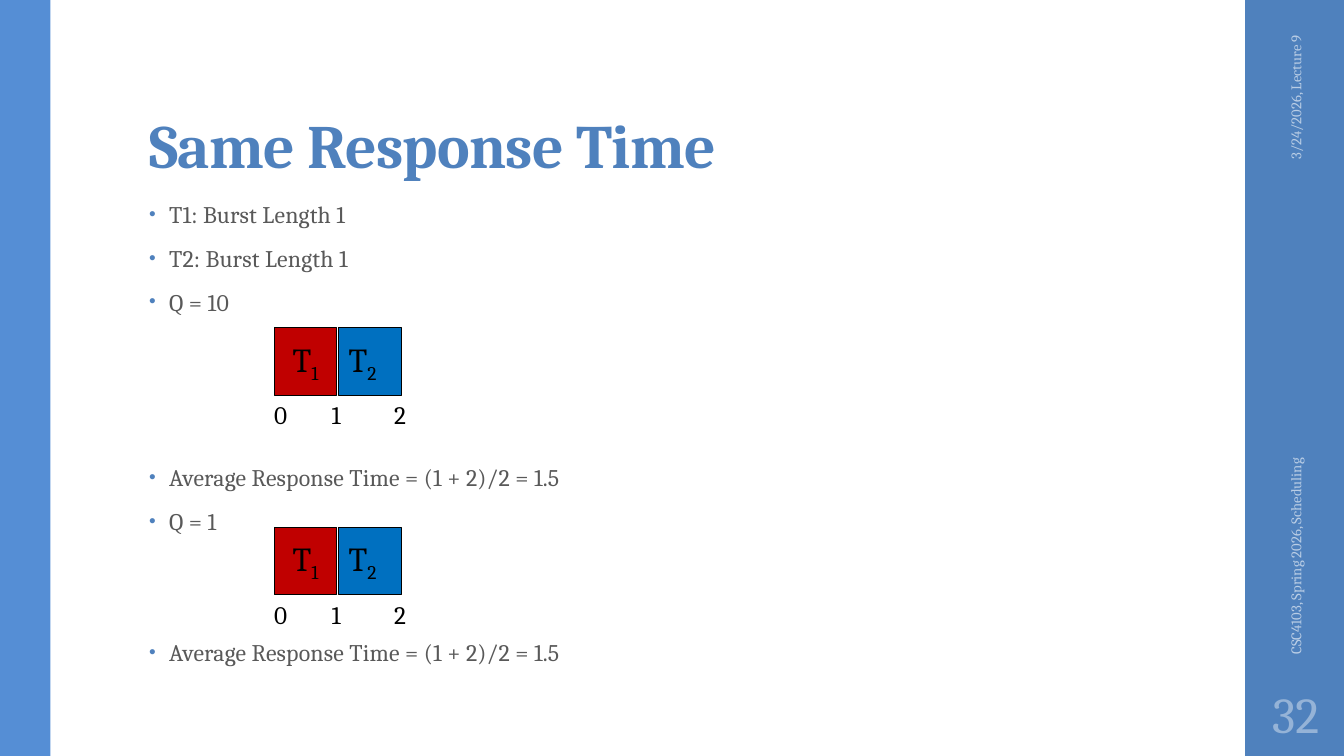
from dataclasses import dataclass

from lxml.etree import SubElement
from pptx import Presentation
from pptx.dml.color import RGBColor
from pptx.enum.shapes import MSO_SHAPE
from pptx.enum.text import MSO_ANCHOR, PP_ALIGN
from pptx.oxml.ns import qn
from pptx.util import Inches, Pt


@dataclass(frozen=True)
class Theme:
    font: str = "Cambria"
    accent: str = "4F81BD"
    left_band: str = "558ED5"
    body: str = "595959"
    footer: str = "B9CDE5"
    number: str = "95B3D7"
    black: str = "000000"
    first_task: str = "C00000"
    second_task: str = "0070C0"
    title_size: float = 44
    body_size: float = 17
    footer_size: float = 10.5
    number_size: float = 36
    task_size: float = 24
    tick_size: float = 18


THEME = Theme()
WIDTH, HEIGHT = Inches(13.33), Inches(7.5)
CELL = HEIGHT / 75  # the page is 75 rows high, with square cells
LINE_PITCH = 31.3  # points from one bullet to the next
BULLET_GAP = 14

# Bullet text and the number of lines left free above it for a chart
BULLETS = [
    ("T1: Burst Length 1", 0),
    ("T2: Burst Length 1", 0),
    ("Q = 10", 0),
    ("Average Response Time = (1 + 2)/2 = 1.5", 3),
    ("Q = 1", 0),
    ("Average Response Time = (1 + 2)/2 = 1.5", 2),
]


def cells(*lengths):
    return [round(length * CELL) for length in lengths]


def add_span(para, text, size, color, bold=False, spacing=0, baseline=0):
    """Add one run; spacing is in points, baseline in percent."""
    span = para.add_run()
    span.text = text
    span.font.name = THEME.font
    span.font.size = Pt(size)
    span.font.bold = bold
    span.font.color.rgb = RGBColor.from_string(color)
    properties = span._r.get_or_add_rPr()
    if spacing:
        properties.set("spc", str(round(spacing * 100)))
    if baseline:
        properties.set("baseline", str(baseline * 1000))


def add_rectangle(shapes, place, fill, outline=None):
    box = shapes.add_shape(MSO_SHAPE.RECTANGLE, *cells(*place))
    box.shadow.inherit = False
    box.fill.solid()
    box.fill.fore_color.rgb = RGBColor.from_string(fill)
    if outline:
        box.line.color.rgb = RGBColor.from_string(outline)
        box.line.width = Pt(0.75)
    else:
        box.line.fill.background()
    return box


def add_text(shapes, place, anchor=MSO_ANCHOR.MIDDLE, align=PP_ALIGN.LEFT, wrap=True):
    """Add an empty text box and return it with its first paragraph."""
    box = shapes.add_textbox(*cells(*place))
    frame = box.text_frame
    frame.word_wrap = wrap
    frame.vertical_anchor = anchor
    frame.paragraphs[0].alignment = align
    return box, frame.paragraphs[0]


def add_title(page, text):
    box, para = add_text(page.shapes, (13.8, 3.2, 106, 15.3), MSO_ANCHOR.BOTTOM)
    box.text_frame.margin_top = Inches(0.03)
    para.line_spacing = 0.9
    add_span(para, text, THEME.title_size, THEME.accent, bold=True, spacing=-0.5)


def set_bullet(para):
    properties = para._p.get_or_add_pPr()
    properties.set("marL", str(Inches(0.2)))
    properties.set("indent", str(-Inches(0.2)))
    color = SubElement(properties, qn("a:buClr"))
    SubElement(color, qn("a:srgbClr"), val=THEME.accent)
    SubElement(properties, qn("a:buSzPct"), val="80000")
    SubElement(properties, qn("a:buFont"), typeface="Arial")
    SubElement(properties, qn("a:buChar"), char="•")


def add_bullets(page, bullets):
    box, para = add_text(page.shapes, (13.8, 20, 94, 47.6), MSO_ANCHOR.TOP)
    for index, (text, free_lines) in enumerate(bullets):
        if index:
            para = box.text_frame.add_paragraph()
        set_bullet(para)
        para.line_spacing = 0.75
        para.space_before = Pt(BULLET_GAP + free_lines * LINE_PITCH if index else 0)
        para.space_after = Pt(2)
        add_span(para, text, THEME.body_size, THEME.body, spacing=0.1)


def add_footer(page, place, text, align):
    box, para = add_text(page.shapes, place, align=align)
    box.rotation = 270
    add_span(para, text, THEME.footer_size, THEME.footer)


def add_page_number(page, text):
    box, para = add_text(page.shapes, (123.5, 67.5, 10, 6.5), align=PP_ALIGN.CENTER)
    frame = box.text_frame
    frame.margin_left = frame.margin_right = Inches(0.05)
    add_span(para, text, THEME.number_size, THEME.number)


def add_schedule(page, top):
    """Add the two task blocks with the time ticks below them."""
    group = page.shapes.add_group_shape()
    tasks = [
        (27.2, THEME.first_task, "1", PP_ALIGN.CENTER),
        (33.6, THEME.second_task, "2", PP_ALIGN.LEFT),
    ]
    for left, fill, number, align in tasks:
        box = add_rectangle(group.shapes, (left, top, 6.2, 6.7), fill, THEME.black)
        box.text_frame.word_wrap = False
        box.text_frame.vertical_anchor = MSO_ANCHOR.MIDDLE
        para = box.text_frame.paragraphs[0]
        para.alignment = align
        add_span(para, "T", THEME.task_size, THEME.black)
        add_span(para, number, THEME.task_size, THEME.black, baseline=-25)
    for time, left in enumerate((26.2, 31.9, 38.1)):
        place = (left, top + 6.65, 3.4, 4)
        _, para = add_text(group.shapes, place, wrap=False)
        add_span(para, str(time), THEME.tick_size, THEME.black)


def main():
    deck = Presentation()
    deck.slide_width, deck.slide_height = WIDTH, HEIGHT
    page = deck.slides.add_slide(deck.slide_layouts[6])
    add_rectangle(page.shapes, (123.5, 0, 9.8, 75), THEME.accent)
    add_rectangle(page.shapes, (0, 0, 5, 75), THEME.left_band)
    add_title(page, "Same Response Time")
    add_bullets(page, BULLETS)
    add_footer(page, (118.1, 10.9, 20.8, 4), "3/24/2026, Lecture 9", PP_ALIGN.RIGHT)
    add_footer(page, (108.9, 44.3, 39.2, 4), "CSC4103, Spring 2026, Scheduling", PP_ALIGN.LEFT)
    add_page_number(page, "32")
    for top in (32.5, 52.3):
        add_schedule(page, top)
    deck.save("out.pptx")


if __name__ == "__main__":
    main()
